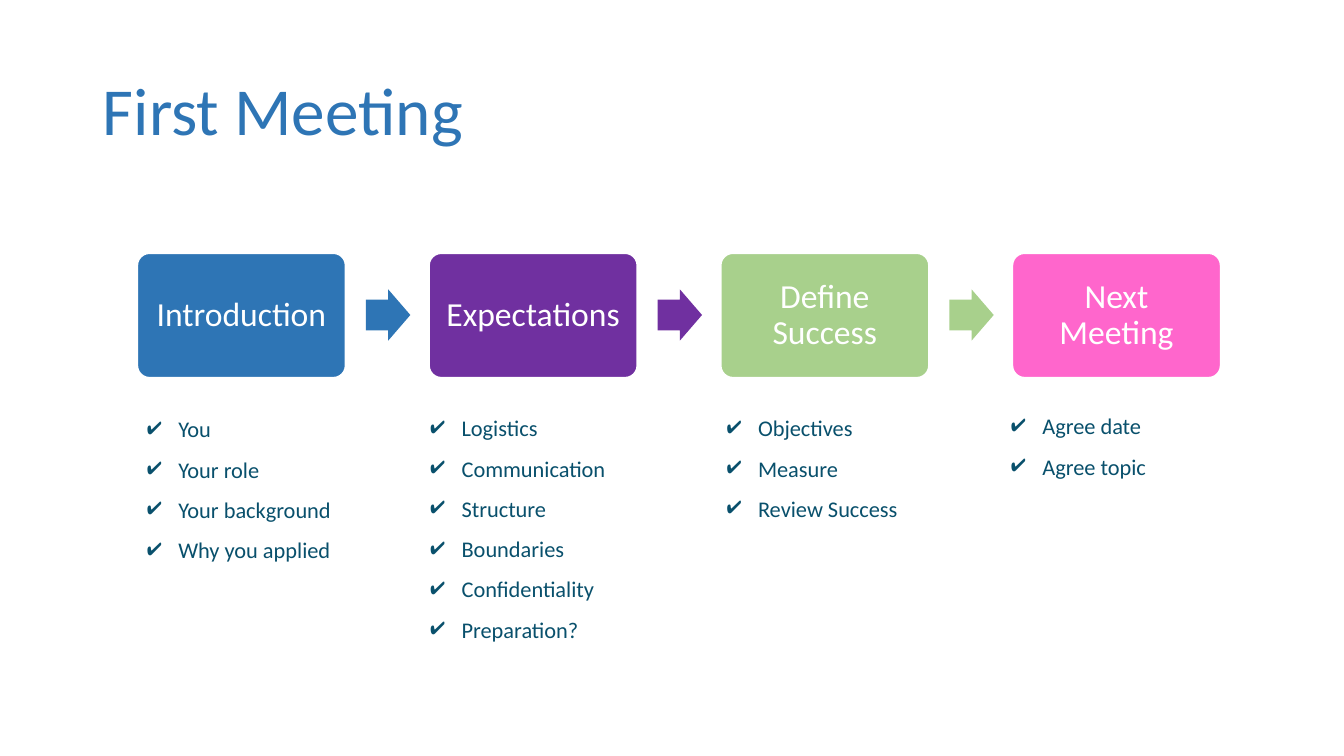
"""Build the First Meeting slide: four steps with check lists."""
from lxml.etree import SubElement
from pptx import Presentation
from pptx.dml.color import RGBColor
from pptx.enum.shapes import MSO_SHAPE as Shape
from pptx.enum.text import MSO_ANCHOR as Anchor, PP_ALIGN as Align
from pptx.oxml.ns import qn
from pptx.util import Inches, Pt

WHITE, TEAL, BLUE = "FFFFFF", "09506C", "2E75B5"
STEPS = [
    ("Introduction", BLUE, (1.36, 3.94, 2.93),
     ["You", "Your role", "Your background", "Why you applied"]),
    ("Expectations", "7030A0", (4.17, 3.93, 3.57),
     ["Logistics", "Communication", "Structure", "Boundaries",
      "Confidentiality", "Preparation?"]),
    ("Define Success", "A8D08C", (7.11, 3.93, 2.12),
     ["Objectives", "Measure", "Review Success"]),
    ("Next Meeting", "FF66CC", (9.93, 3.91, 1.72),
     ["Agree date", "Agree topic"]),
]


def paint(form, color):
    form.rgb = RGBColor.from_string(color)


def write(para, text, size, color, **form):
    run = para.add_run()
    run.text = text
    run.font.name, run.font.size = "Calibri", Pt(size)
    paint(run.font.color, color)
    for name, value in form.items():
        setattr(para, name, value)


deck = Presentation()
deck.slide_width, deck.slide_height = Inches(13.33), Inches(7.5)
slide = deck.slides.add_slide(deck.slide_layouts[5])
shapes = slide.shapes

title = shapes.title
place = {"left": 0.92, "top": 0.4, "width": 11.5, "height": 1.45}
for name, value in place.items():
    setattr(title, name, Inches(value))
title.text_frame.vertical_anchor = Anchor.MIDDLE
write(title.text_frame.paragraphs[0], "First Meeting", 48, BLUE,
      alignment=Align.LEFT, line_spacing=0.9)

for i, (label, color, (left, top, height), items) in enumerate(STEPS):
    x = 1.36 + 2.893 * i
    card = shapes.add_shape(Shape.ROUNDED_RECTANGLE, Inches(x), Inches(2.51),
                            Inches(2.07), Inches(1.24))
    card.adjustments[0] = 0.1
    card.shadow.inherit = False
    card.fill.solid()
    paint(card.fill.fore_color, color)
    paint(card.line.color, WHITE)
    card.line.width = Pt(1.5)
    frame = card.text_frame
    frame.word_wrap = True
    frame.vertical_anchor = Anchor.MIDDLE
    for side in ("left", "top", "right", "bottom"):
        setattr(frame, "margin_" + side, Inches(0.1))
    write(frame.paragraphs[0], label, 24, WHITE,
          alignment=Align.CENTER, line_spacing=0.9)

    if i < len(STEPS) - 1:
        arrow = shapes.add_shape(Shape.RIGHT_ARROW, Inches(x + 2.27),
                                 Inches(2.87), Inches(0.44), Inches(0.51))
        arrow.adjustments[0] = 0.6
        arrow.shadow.inherit = False
        arrow.fill.solid()
        paint(arrow.fill.fore_color, color)
        arrow.line.fill.background()

    box = shapes.add_textbox(Inches(left), Inches(top), Inches(2.25),
                             Inches(height))
    frame = box.text_frame
    frame.word_wrap = True
    for n, item in enumerate(items):
        para = frame.add_paragraph() if n else frame.paragraphs[0]
        props = para._p.get_or_add_pPr()
        props.set("marL", str(Inches(0.31)))
        props.set("indent", str(-Inches(0.31)))
        tint = SubElement(props, qn("a:buClr"))
        SubElement(tint, qn("a:srgbClr"), val=TEAL)
        SubElement(props, qn("a:buChar"), char="✔")
        write(para, item, 16, TEAL, line_spacing=1.5)

deck.save("out.pptx")
